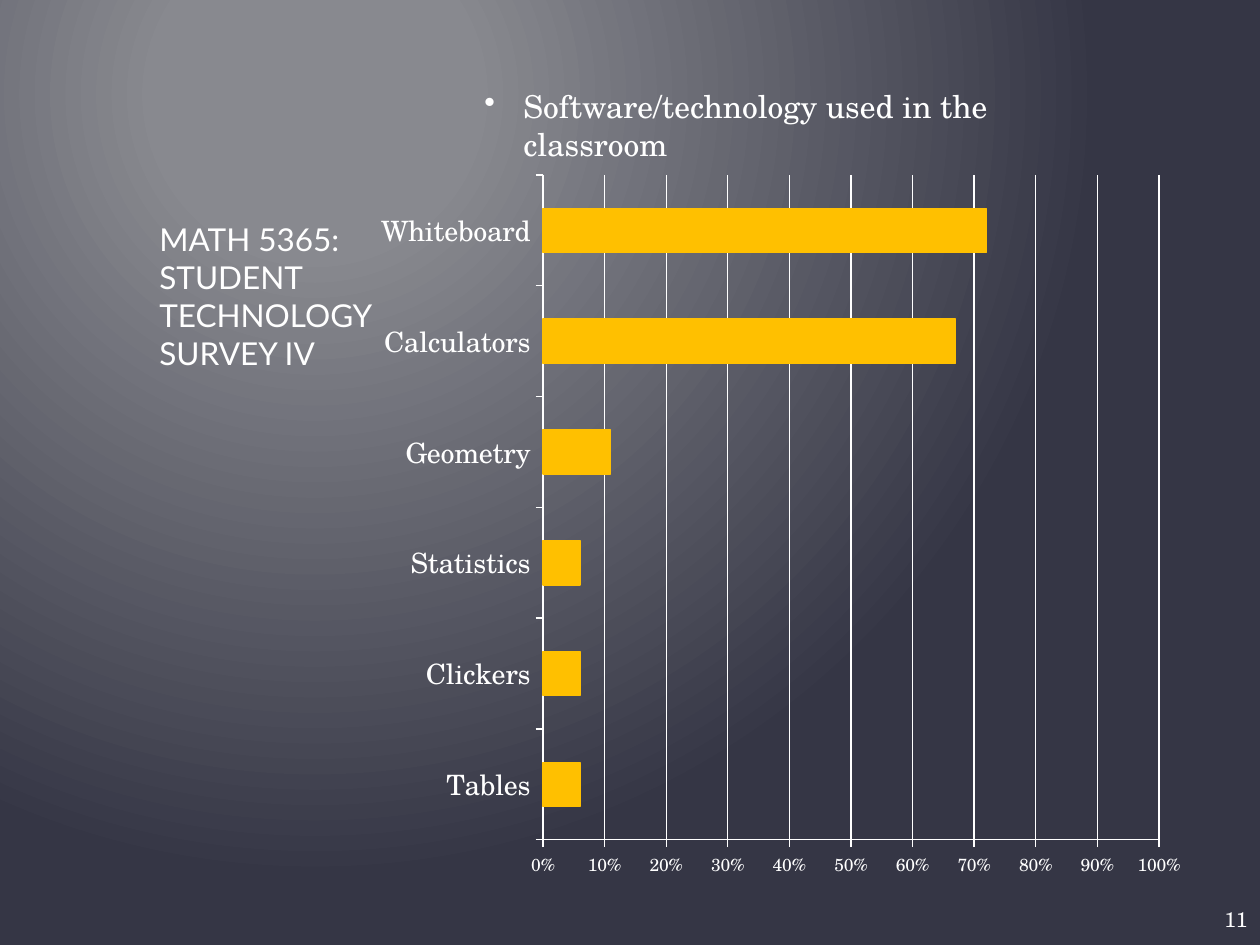
from dataclasses import dataclass

from lxml import etree
from pptx import Presentation
from pptx.chart.data import CategoryChartData
from pptx.dml.color import RGBColor
from pptx.enum.chart import XL_CHART_TYPE, XL_TICK_MARK
from pptx.enum.text import MSO_ANCHOR, PP_ALIGN
from pptx.oxml import parse_xml
from pptx.oxml.ns import nsdecls, qn
from pptx.util import Emu, Pt

BAR_STACKED = XL_CHART_TYPE.BAR_STACKED
TICK_OUTSIDE = XL_TICK_MARK.OUTSIDE
TOP, MIDDLE = MSO_ANCHOR.TOP, MSO_ANCHOR.MIDDLE
LEFT, RIGHT = PP_ALIGN.LEFT, PP_ALIGN.RIGHT

PX_PER_INCH = 126
PAGE_SIZE = (1260, 945)
CHART_BOX = (357, 160, 840, 732)
PLOT_BOX = (543, 175, 616, 665)
USAGE = {
    "Tables": 0.06,
    "Clickers": 0.06,
    "Statistics": 0.06,
    "Geometry": 0.11,
    "Calculators": 0.67,
    "Whiteboard": 0.72,
}


@dataclass(frozen=True)
class Theme:
    glow: str = "88898F"
    dark: str = "353645"
    ink: str = "FFFFFF"
    bar: str = "FFC000"
    title_font: str = "Lato"
    body_font: str = "TeX Gyre Schola"
    text_size: int = 18
    category_size: int = 16
    number_size: int = 12
    axis_size: int = 10
    line_width: float = 0.75


THEME = Theme()


def px(length):
    return Emu(round(length * 914400 / PX_PER_INCH))


def color(code):
    return RGBColor.from_string(code)


def set_all(target, values):
    for name, value in values.items():
        setattr(target, name, value)


def style_font(font, name, size):
    set_all(font, {"name": name, "size": Pt(size)})
    font.color.rgb = color(THEME.ink)


def style_line(line, code):
    line.color.rgb = color(code)
    line.width = Pt(THEME.line_width)


def paint_background(page):
    """Fill the page with a round glow centred in its upper left."""
    fill = page.background.fill
    fill.gradient()
    for stop, code, position in zip(
        fill.gradient_stops, (THEME.glow, THEME.dark), (0.2, 1)
    ):
        stop.color.rgb = color(code)
        stop.position = position
    gradient = page.element.find(".//" + qn("a:gradFill"))
    gradient.remove(gradient.find(qn("a:lin")))
    gradient.append(parse_xml(
        f'<a:path {nsdecls("a")} path="circle">'
        '<a:fillToRect l="50000" t="20000" r="100000" b="100000"/></a:path>'
    ))


def add_text(page, bounds, text, font, size, align=LEFT, anchor=TOP):
    box = page.shapes.add_textbox(*map(px, bounds))
    set_all(box.text_frame, {"word_wrap": True, "vertical_anchor": anchor})
    para = box.text_frame.paragraphs[0]
    para.alignment = align
    span = para.add_run()
    span.text = text
    style_font(span.font, font, size)
    return para


def add_bullet(para, indent):
    properties = para._p.get_or_add_pPr()
    properties.set("marL", str(px(indent)))
    properties.set("indent", str(-px(indent)))
    etree.SubElement(properties, qn("a:buChar")).set("char", "•")


def place_plot(chart):
    """Pin the inner plot area, as fractions of the chart box."""
    left, top, width, height = CHART_BOX
    plot_left, plot_top, plot_width, plot_height = PLOT_BOX
    settings = {
        "layoutTarget": "inner",
        "xMode": "edge",
        "yMode": "edge",
        "x": (plot_left - left) / width,
        "y": (plot_top - top) / height,
        "w": plot_width / width,
        "h": plot_height / height,
    }
    area = chart._chartSpace.find(".//" + qn("c:plotArea"))
    old_layout = area.find(qn("c:layout"))
    if old_layout is not None:
        area.remove(old_layout)
    layout = etree.Element(qn("c:layout"))
    manual = etree.SubElement(layout, qn("c:manualLayout"))
    for name, value in settings.items():
        etree.SubElement(manual, qn(f"c:{name}")).set("val", str(value))
    area.insert(0, layout)


def style_axis(axis, size):
    set_all(axis, {"major_tick_mark": TICK_OUTSIDE})
    style_line(axis.format.line, THEME.ink)
    style_font(axis.tick_labels.font, THEME.body_font, size)


def add_usage_chart(page):
    data = CategoryChartData(number_format="0%")
    data.categories = list(USAGE)
    data.add_series("Series 1", list(USAGE.values()))
    chart = page.shapes.add_chart(BAR_STACKED, *map(px, CHART_BOX), data).chart
    set_all(chart, {"has_legend": False, "has_title": False})
    style_font(chart.font, THEME.body_font, THEME.axis_size)

    style_axis(chart.category_axis, THEME.category_size)
    values = chart.value_axis
    style_axis(values, THEME.axis_size)
    set_all(values, {"minimum_scale": 0, "maximum_scale": 1,
                     "major_unit": 0.1, "has_major_gridlines": True})
    style_line(values.major_gridlines.format.line, THEME.ink)
    set_all(values.tick_labels, {"number_format": "0%",
                                 "number_format_is_linked": False})

    plot = chart.plots[0]
    set_all(plot, {"gap_width": 150, "overlap": 100, "vary_by_categories": False})
    bars = plot.series[0].format
    bars.fill.solid()
    bars.fill.fore_color.rgb = color(THEME.bar)
    style_line(bars.line, THEME.bar)
    place_plot(chart)


def main():
    deck = Presentation()
    deck.slide_width, deck.slide_height = map(px, PAGE_SIZE)
    page = deck.slides.add_slide(deck.slide_layouts[6])
    paint_background(page)
    add_text(page, (147, 214, 286, 272), "MATH 5365: STUDENT TECHNOLOGY SURVEY IV",
             THEME.title_font, THEME.text_size)
    add_text(page, (1104, 903, 156, 32), "11", THEME.body_font,
             THEME.number_size, RIGHT, MIDDLE)
    heading = add_text(page, (472, 81, 670, 165),
                       "Software/technology used in the classroom",
                       THEME.body_font, THEME.text_size)
    add_bullet(heading, 39)
    add_usage_chart(page)
    deck.save("out.pptx")


if __name__ == "__main__":
    main()
